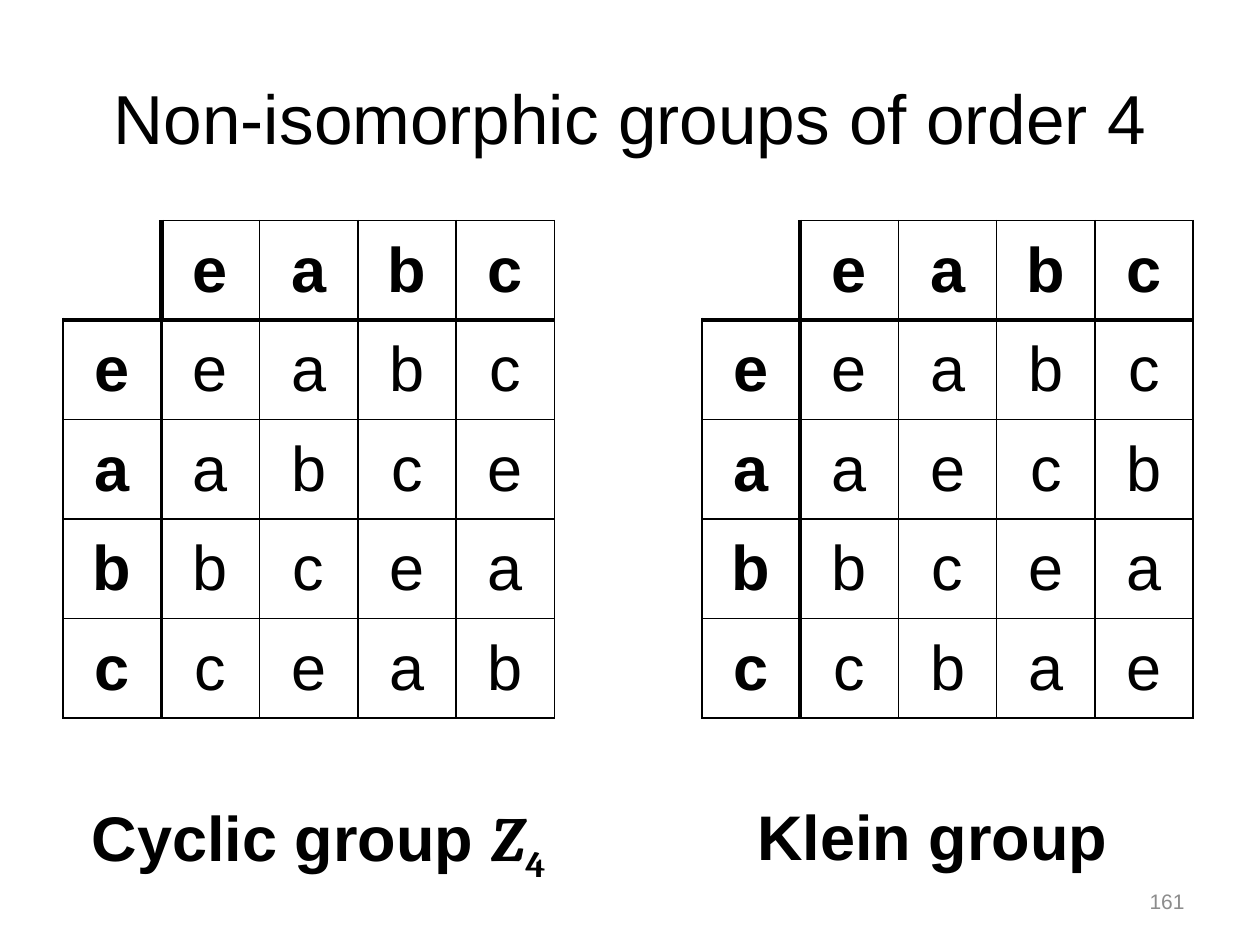
import pptx
import pptx.dml.color
import pptx.enum.text
import pptx.oxml
import pptx.oxml.ns
import pptx.util
from pptx.util import Inches, Pt

ALIGN = pptx.enum.text.PP_ALIGN
ANCHOR = pptx.enum.text.MSO_ANCHOR

TITLE = "Non-isomorphic groups of order 4"
PAGE_NUMBER = "161"
ELEMENTS = "eabc"
# Products row by row, table left, and width of the rule after the row labels
GROUPS = [
    {"products": ["eabc", "abce", "bcea", "ceab"], "left": 0.5, "label_rule": 2.25},
    {"products": ["eabc", "aecb", "bcea", "cbae"], "left": 5.57, "label_rule": 3},
]
CAPTIONS = [
    ((0.5, 6.29, 4.06, 0.71), ["Cyclic group ", "Z", "4"]),
    ((5.44, 6.28, 4.06, 0.71), ["Klein group "]),
]

TABLE_TOP, COLUMN_WIDTH, ROW_HEIGHT = 1.75, 0.78, 0.79
THIN, HEADER_RULE, CORNER_RULE = 1, 2.25, 3
BLACK, GREY = "000000", "8C8C8C"


def style(font, size, color=BLACK, bold=False):
    font.name = "Arial"
    font.size = Pt(size)
    font.bold = bold
    font.color.rgb = pptx.dml.color.RGBColor.from_string(color)


def add_text(slide, place, parts, size, align, anchor, color=BLACK, bold=False):
    box = slide.shapes.add_textbox(*map(Inches, place))
    frame = box.text_frame
    frame.word_wrap = True
    frame.vertical_anchor = anchor
    paragraph = frame.paragraphs[0]
    paragraph.alignment = align
    for part in parts:
        run = paragraph.add_run()
        run.text = part
        style(run.font, size, color, bold)
    return paragraph.runs


def set_borders(cell, widths):
    """Draw left, right, top and bottom borders; a width of 0 means no line."""
    properties = cell._tc.get_or_add_tcPr()
    for index, (side, width) in enumerate(zip("LRTB", widths)):
        fill = f'<a:solidFill><a:srgbClr val="{BLACK}"/></a:solidFill>' if width else "<a:noFill/>"
        line = pptx.oxml.parse_xml(
            f'<a:ln{side} {pptx.oxml.ns.nsdecls("a")} w="{Pt(width)}">{fill}</a:ln{side}>')
        properties.insert(index, line)


def border_widths(row, column, label_rule):
    if row == column == 0:
        return 0, CORNER_RULE, 0, CORNER_RULE
    vertical = CORNER_RULE if row == 0 else label_rule
    horizontal = CORNER_RULE if column == 0 else HEADER_RULE
    return (vertical if column == 1 else THIN,
            vertical if column == 0 else THIN,
            horizontal if row == 1 else THIN,
            horizontal if row == 0 else THIN)


def add_group_table(slide, group):
    rows = [["", *ELEMENTS]]
    rows += [[label, *products] for label, products in zip(ELEMENTS, group["products"])]
    count = len(rows)
    table = slide.shapes.add_table(
        count, count, Inches(group["left"]), Inches(TABLE_TOP),
        Inches(COLUMN_WIDTH * count), Inches(ROW_HEIGHT * count)).table
    table.first_row = table.horz_banding = False
    for column in table.columns:
        column.width = Inches(COLUMN_WIDTH)
    for r, row in enumerate(rows):
        table.rows[r].height = Inches(ROW_HEIGHT)
        for c, element in enumerate(row):
            cell = table.cell(r, c)
            cell.text = element
            cell.vertical_anchor = ANCHOR.MIDDLE
            cell.fill.background()
            paragraph = cell.text_frame.paragraphs[0]
            paragraph.alignment = ALIGN.CENTER
            style(paragraph.font, 36, bold=r == 0 or c == 0)
            for run in paragraph.runs:
                style(run.font, 36, bold=r == 0 or c == 0)
            set_borders(cell, border_widths(r, c, group["label_rule"]))


def main():
    deck = pptx.Presentation()
    deck.slide_width, deck.slide_height = Inches(10), Inches(7.5)
    slide = deck.slides.add_slide(deck.slide_layouts[6])

    add_text(slide, (0.5, 0.3, 9, 1.25), [TITLE], 39.6, ALIGN.CENTER, ANCHOR.MIDDLE)
    for group in GROUPS:
        add_group_table(slide, group)
    add_text(slide, (7.17, 6.95, 2.33, 0.4), [PAGE_NUMBER], 12,
             ALIGN.RIGHT, ANCHOR.MIDDLE, color=GREY)

    for place, parts in CAPTIONS:
        runs = add_text(slide, place, parts, 36, ALIGN.CENTER, ANCHOR.TOP, bold=True)
        for symbol in runs[1:]:
            symbol.font.name = "Cambria"
        if len(runs) > 1:
            runs[1].font.italic = True
            runs[2].font._element.set("baseline", "-25000")

    deck.save("out.pptx")


if __name__ == "__main__":
    main()
